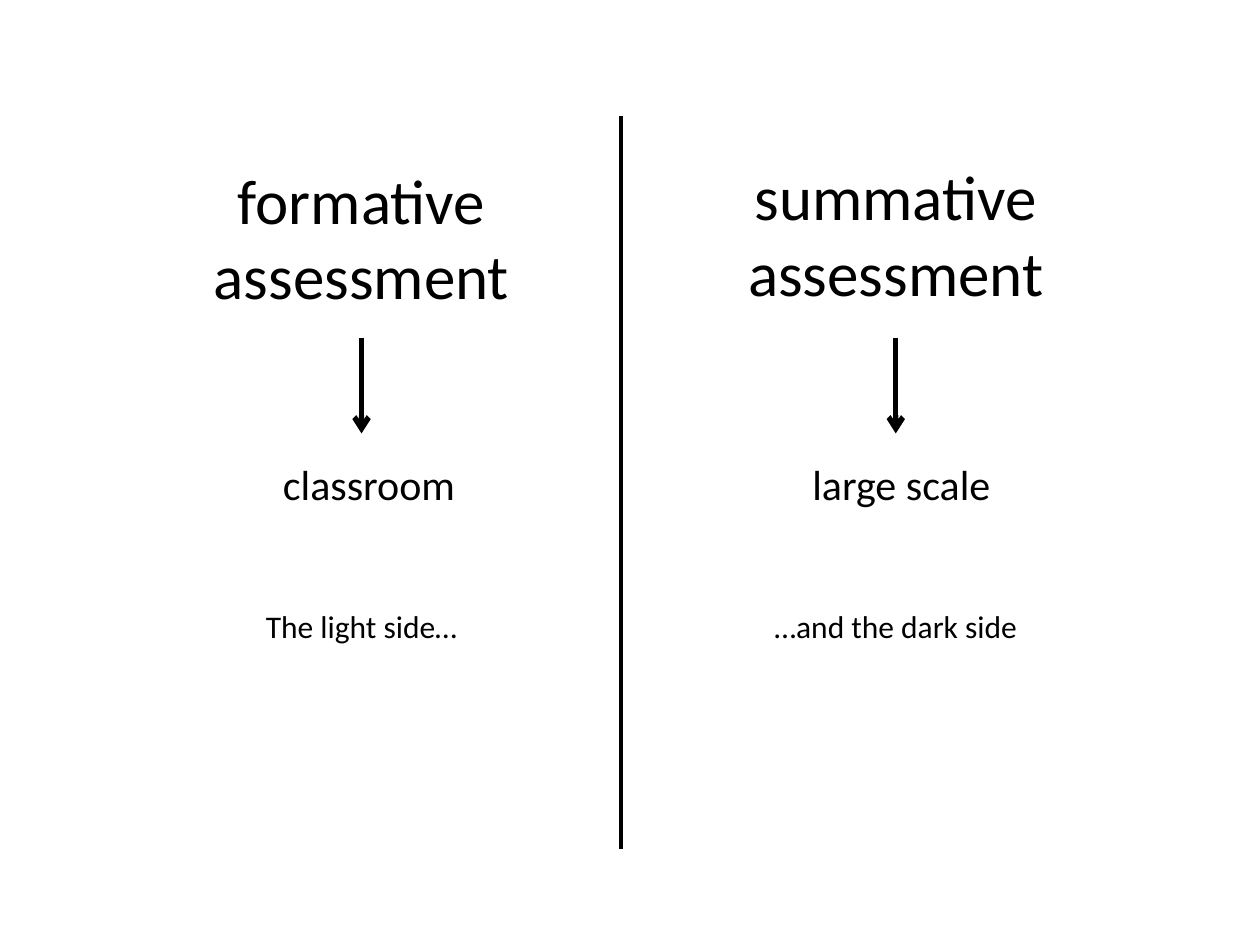
from lxml import etree
from pptx import Presentation
from pptx.dml.color import RGBColor
from pptx.enum.shapes import MSO_CONNECTOR
from pptx.enum.text import MSO_ANCHOR, PP_ALIGN
from pptx.oxml.ns import qn
from pptx.util import Pt

STRAIGHT = MSO_CONNECTOR.STRAIGHT
CENTER = PP_ALIGN.CENTER
TOP = MSO_ANCHOR.TOP
FONT = "Calibri"
BLACK = "000000"
COLUMN_WIDTH = 266.4


def color(value):
    return RGBColor.from_string(value)


def add_text(slide, text, left, top, width, height, size):
    box = slide.shapes.add_textbox(Pt(left), Pt(top), Pt(width), Pt(height))
    text_frame = box.text_frame
    text_frame.word_wrap = True
    text_frame.vertical_anchor = TOP
    text_frame.text = text
    paragraph = text_frame.paragraphs[0]
    paragraph.alignment = CENTER
    for run in paragraph.runs:
        run.font.name = FONT
        run.font.size = Pt(size)
        run.font.color.rgb = color(BLACK)


def add_vertical_line(slide, x, top, bottom, weight, arrow=False):
    connector = slide.shapes.add_connector(STRAIGHT, Pt(x), Pt(top), Pt(x), Pt(bottom))
    connector.line.color.rgb = color(BLACK)
    connector.line.width = Pt(weight)
    if arrow:
        line = connector.line._get_or_add_ln()
        etree.SubElement(line, qn("a:tailEnd"), type="arrow")
    etree.SubElement(connector._element.spPr, qn("a:effectLst"))


def add_column(slide, left, heading, heading_top, heading_height,
               scale, scale_left, scale_width, remark, remark_width):
    """Place a heading, an arrow down to its scale, and a remark in one column."""
    middle = left + COLUMN_WIDTH / 2
    add_text(slide, heading, left, heading_top, COLUMN_WIDTH, heading_height, 36)
    add_vertical_line(slide, middle, 193, 247.7, 3, arrow=True)
    add_text(slide, scale, scale_left, 258.5, scale_width, 36, 24)
    add_text(slide, remark, middle - remark_width / 2, 343.4, remark_width, 29, 18)


def main():
    presentation = Presentation()
    presentation.slide_width = Pt(720)
    presentation.slide_height = Pt(540)
    slide = presentation.slides.add_slide(presentation.slide_layouts[6])
    add_column(slide, 73.4, "formative\vassessment", 88.6, 102.2,
               "classroom", 66.2, 289.4, "The light side…", 147.6)
    add_column(slide, 378.7, "summative\vassessment", 86.4, 106.6,
               "large scale", 365, 300.2, "…and the dark side", 160.6)
    add_vertical_line(slide, 355, 66.2, 485.3, 2.5)
    presentation.save("out.pptx")


if __name__ == "__main__":
    main()
